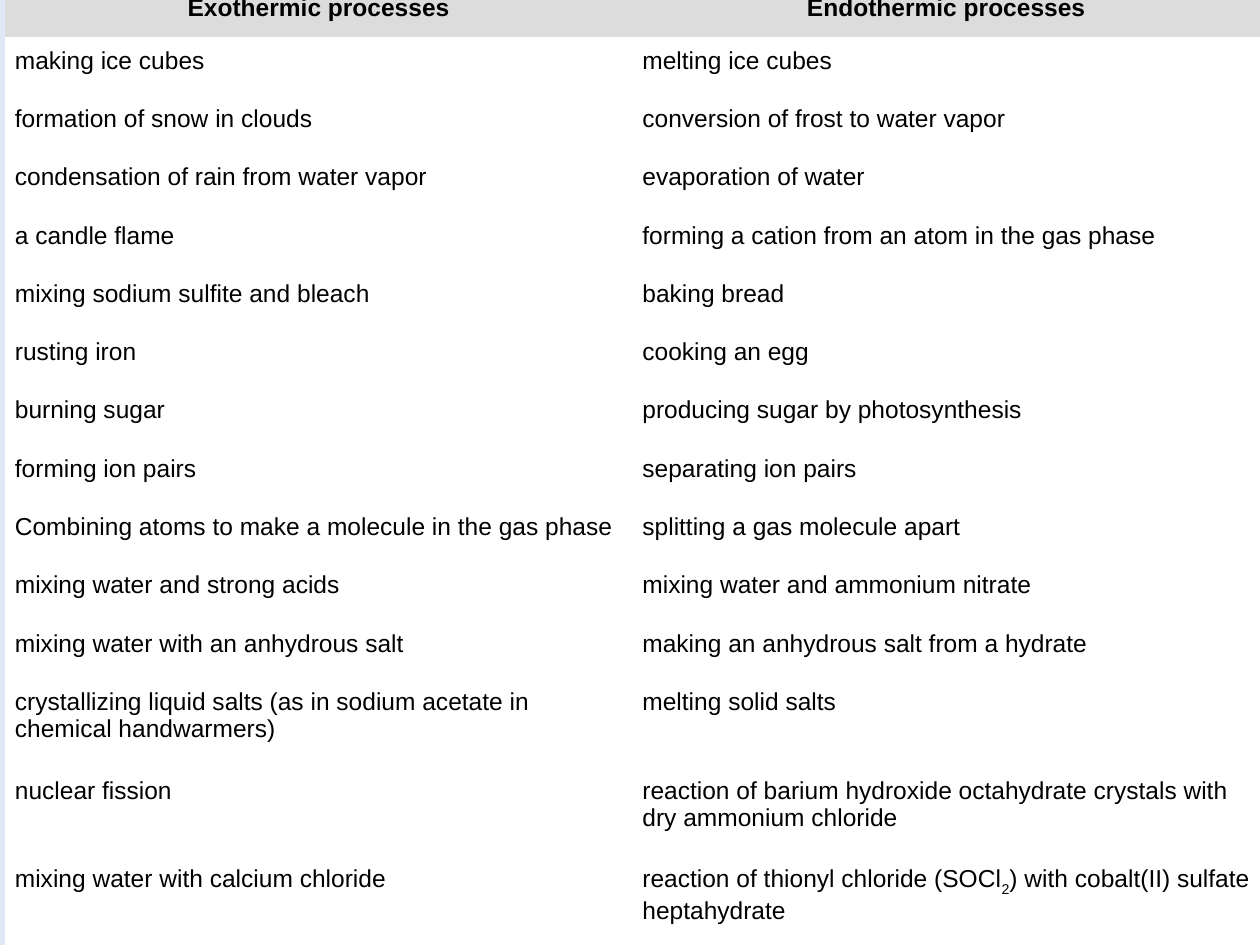
from pptx import Presentation
from pptx.dml.color import RGBColor
from pptx.enum.text import MSO_ANCHOR as Anchor, PP_ALIGN as Align
from pptx.oxml import parse_xml
from pptx.oxml.ns import qn
from pptx.util import Cm, Pt

BLACK = RGBColor(0x00, 0x00, 0x00)
WHITE = RGBColor(0xFF, 0xFF, 0xFF)
HEADER_GRAY = RGBColor(0xDC, 0xDC, 0xDC)
NO_STYLE = "{2D5ABB26-0587-4C30-8999-92F81FD0307C}"
GRADIENT = """
<a:gradFill xmlns:a="http://schemas.openxmlformats.org/drawingml/2006/main" rotWithShape="1">
  <a:gsLst>
    <a:gs pos="6000"><a:srgbClr val="FF0000"/></a:gs>
    <a:gs pos="38000"><a:srgbClr val="DFE6F5"><a:alpha val="0"/></a:srgbClr></a:gs>
    <a:gs pos="58000"><a:srgbClr val="E1E8F5"/></a:gs>
  </a:gsLst>
  <a:path path="circle"><a:fillToRect l="100000" t="100000"/></a:path>
</a:gradFill>"""

# Each entry is a list of runs; every second run is a subscript
PROCESSES = [
    ("Exothermic processes", "Endothermic processes"),
    ("making ice cubes", "melting ice cubes"),
    ("formation of snow in clouds", "conversion of frost to water vapor"),
    ("condensation of rain from water vapor", "evaporation of water"),
    ("a candle flame", "forming a cation from an atom in the gas phase"),
    ("mixing sodium sulfite and bleach", "baking bread"),
    ("rusting iron", "cooking an egg"),
    ("burning sugar", "producing sugar by photosynthesis"),
    ("forming ion pairs", "separating ion pairs"),
    ("Combining atoms to make a molecule in the gas phase", "splitting a gas molecule apart"),
    ("mixing water and strong acids", "mixing water and ammonium nitrate"),
    ("mixing water with an anhydrous salt", "making an anhydrous salt from a hydrate"),
    ("crystallizing liquid salts (as in sodium acetate in chemical handwarmers)",
     "melting solid salts"),
    ("nuclear fission",
     "reaction of barium hydroxide octahydrate crystals with dry ammonium chloride"),
    ("mixing water with calcium chloride",
     "reaction of thionyl chloride (SOCl|2|) with cobalt(II) sulfate heptahydrate"),
]

deck = Presentation()
deck.slide_width, deck.slide_height = Cm(25.4), Cm(19.05)
page = deck.slides.add_slide(deck.slide_layouts[6])

# Radial background, spreading from the bottom right corner
page.background.fill.solid()
solid = page.element.cSld.find(".//" + qn("a:solidFill"))
solid.getparent().replace(solid, parse_xml(GRADIENT))

# Table: it ends at the bottom edge, and its last three rows hold two lines
table_height, tall_row, tall_count = Cm(19.48), Cm(1.79), 3
short_count = len(PROCESSES) - tall_count
short_row = (table_height - tall_count * tall_row) // short_count
frame = page.shapes.add_table(len(PROCESSES), 2, Cm(0.1), deck.slide_height - table_height,
                              Cm(25.3), table_height)
table = frame.table
table.first_row = table.horz_banding = False
table._tbl.tblPr.find(qn("a:tableStyleId")).text = NO_STYLE

for row_index, entries in enumerate(PROCESSES):
    is_header = row_index == 0
    table.rows[row_index].height = short_row if row_index < short_count else tall_row
    for column_index, entry in enumerate(entries):
        cell = table.cell(row_index, column_index)
        cell.fill.solid()
        cell.fill.fore_color.rgb = HEADER_GRAY if is_header else WHITE
        cell.margin_left = cell.margin_right = Cm(0.2)
        cell.margin_top = cell.margin_bottom = Cm(0.2)
        cell.vertical_anchor = Anchor.MIDDLE if is_header else Anchor.TOP

        para = cell.text_frame.paragraphs[0]
        para.alignment = Align.CENTER if is_header else Align.LEFT
        para.font.name, para.font.size = "Arial", Pt(14)
        para.font.bold = is_header
        para.font.color.rgb = BLACK
        for part_index, part in enumerate(entry.split("|")):
            span = para.add_run()
            span.text = part
            if part_index % 2:
                span.font._element.set("baseline", "-25000")

deck.save("out.pptx")
